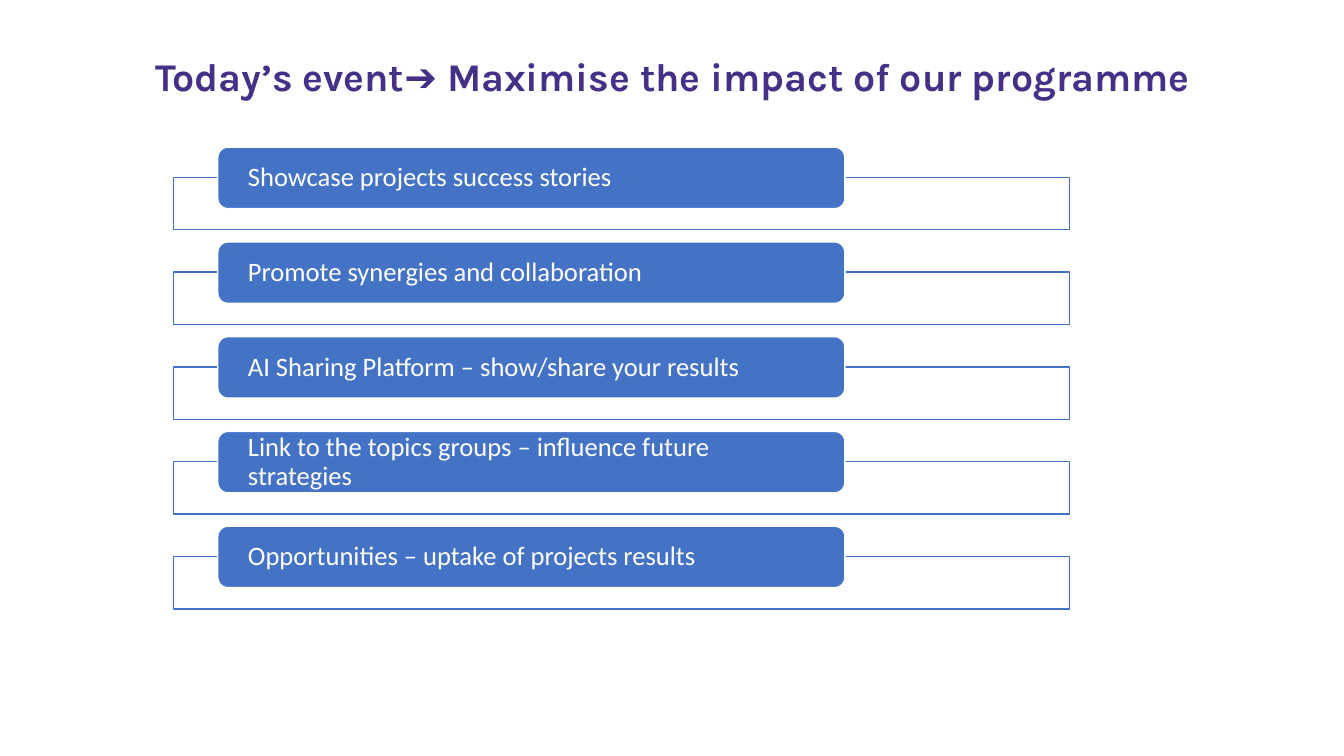
from dataclasses import dataclass

from lxml.etree import SubElement
from pptx import Presentation
from pptx.dml.color import RGBColor
from pptx.enum.shapes import MSO_SHAPE
from pptx.enum.text import MSO_ANCHOR, MSO_AUTO_SIZE, PP_ALIGN
from pptx.oxml.ns import qn
from pptx.shapes.autoshape import Shape
from pptx.slide import Slide
from pptx.text.text import TextFrame
from pptx.util import Inches, Pt

COLORS = {"title": "443187", "accent": "4472C4", "white": "FFFFFF"}
TITLE = "Today’s event➔ Maximise the impact of our programme"
TITLE_FONT = {"name": "Karla", "size": Pt(28), "bold": True}
GOAL_FONT = {"name": "Calibri", "size": Pt(19)}
FIRST_TOP, PITCH = 1.46, 0.94


@dataclass(frozen=True)
class Block:
    preset: MSO_SHAPE
    left: float
    drop: float  # distance below the top of its row
    width: float
    height: float
    fill: str
    line: str


FRAME = Block(MSO_SHAPE.RECTANGLE, 1.72, 0.3, 8.89, 0.52, "white", "accent")
PILL = Block(MSO_SHAPE.ROUNDED_RECTANGLE, 2.16, 0, 6.22, 0.61, "accent", "white")

GOALS = (
    "Showcase projects success stories",
    "Promote synergies and collaboration",
    "AI Sharing Platform – show/share your results",
    "Link to the topics groups – influence future strategies",
    "Opportunities – uptake of projects results",
)


def rgb(color: str) -> RGBColor:
    return RGBColor.from_string(COLORS[color])


def write(frame: TextFrame, text: str, font: dict, color: str, align: PP_ALIGN) -> None:
    paragraph = frame.paragraphs[0]
    paragraph.alignment = align
    paragraph.line_spacing = 0.9
    run = paragraph.add_run()
    run.text = text
    for attribute, value in font.items():
        setattr(run.font, attribute, value)
    run.font.color.rgb = rgb(color)


def draw_block(slide: Slide, block: Block, row_top: float) -> Shape:
    shape = slide.shapes.add_shape(
        block.preset, Inches(block.left), Inches(row_top + block.drop),
        Inches(block.width), Inches(block.height))
    shape.shadow.inherit = False
    shape.fill.solid()
    shape.fill.fore_color.rgb = rgb(block.fill)
    shape.line.color.rgb = rgb(block.line)
    shape.line.width = Pt(1)
    return shape


def set_opacity(shape: Shape, percent: int) -> None:
    fill_color = shape.fill._xPr.find(f"{qn('a:solidFill')}/{qn('a:srgbClr')}")
    SubElement(fill_color, qn("a:alpha")).set("val", str(percent * 1000))


def draw_goal(slide: Slide, goal: str, row_top: float) -> None:
    set_opacity(draw_block(slide, FRAME, row_top), 90)
    frame = draw_block(slide, PILL, row_top).text_frame
    layout = {
        "word_wrap": True, "vertical_anchor": MSO_ANCHOR.MIDDLE,
        "margin_left": Inches(0.27), "margin_right": Inches(0.27),
        "margin_top": 0, "margin_bottom": 0,
    }
    for attribute, value in layout.items():
        setattr(frame, attribute, value)
    write(frame, goal, GOAL_FONT, "white", PP_ALIGN.LEFT)


def draw_title(slide: Slide) -> None:
    frame = slide.shapes.add_textbox(
        Inches(1.28), Inches(0.52), Inches(10.78), Inches(0.54)).text_frame
    frame.word_wrap = True
    frame.auto_size = MSO_AUTO_SIZE.SHAPE_TO_FIT_TEXT
    write(frame, TITLE, TITLE_FONT, "title", PP_ALIGN.CENTER)


def main() -> None:
    deck = Presentation()
    deck.slide_width, deck.slide_height = Inches(13.33), Inches(7.5)
    slide = deck.slides.add_slide(deck.slide_layouts[6])
    draw_title(slide)
    for row, goal in enumerate(GOALS):
        draw_goal(slide, goal, FIRST_TOP + row * PITCH)
    deck.save("out.pptx")


if __name__ == "__main__":
    main()
